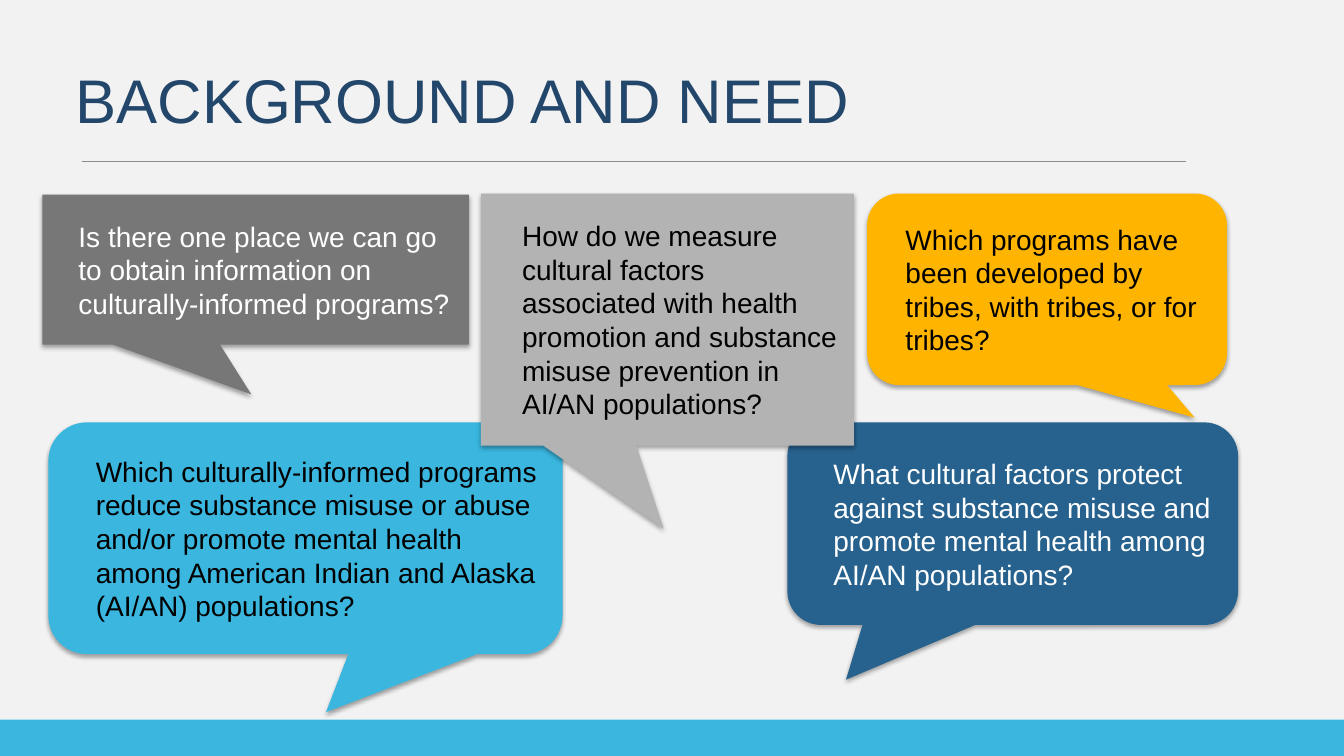
from dataclasses import dataclass

import lxml.etree
import pptx
import pptx.dml.color
import pptx.enum.shapes
import pptx.enum.text
import pptx.oxml
import pptx.oxml.ns
import pptx.util

EMU_PER_PX = 9144
SHAPES = pptx.enum.shapes.MSO_SHAPE
ROUNDED = SHAPES.ROUNDED_RECTANGULAR_CALLOUT
SQUARE = SHAPES.RECTANGULAR_CALLOUT


@dataclass(frozen=True)
class Theme:
    font: str = "Arial"
    title_size: int = 44
    body_size: int = 20
    rule_width: float = 0.5
    backdrop: str = "F2F2F2"
    sky: str = "3AB6DF"
    navy: str = "27628E"
    amber: str = "FFB500"
    dark_grey: str = "777777"
    light_grey: str = "B2B3B2"
    rule: str = "8C8C8C"
    title: str = "23466B"
    black: str = "000000"
    white: str = "FFFFFF"


@dataclass(frozen=True)
class Box:
    left: int
    top: int
    width: int
    height: int

    def emu(self) -> tuple[pptx.util.Emu, ...]:
        return tuple(px(side) for side in (self.left, self.top, self.width, self.height))


@dataclass(frozen=True)
class Callout:
    box: Box
    kind: SHAPES
    tip: tuple[float, float]
    fill: str
    color: str
    indent: int
    text: str


THEME = Theme()
BACKDROP = Box(0, 0, 1333, 714)
FOOTER = Box(0, 714, 1333, 36)
TITLE = Box(65, 36, 1145, 125)
RULE = Box(81, 160, 1095, 0)

PROTECTIVE_FACTORS = Callout(
    Box(781, 419, 447, 201), ROUNDED, (-0.37, 0.77), THEME.navy, THEME.white, 26,
    "What cultural factors protect against substance misuse and promote mental health "
    "among AI/AN populations?",
)
QUESTIONS = [
    Callout(
        Box(860, 192, 357, 190), ROUNDED, (0.41, 0.67), THEME.amber, THEME.black, 19,
        "Which programs have been developed by tribes, with tribes, or for tribes?",
    ),
    Callout(
        Box(42, 193, 423, 149), SQUARE, (-0.01, 0.83), THEME.dark_grey, THEME.white, 26,
        "Is there one place we can go to obtain information on culturally-informed programs?",
    ),
    Callout(
        Box(48, 419, 510, 230), ROUNDED, (0.04, 0.75), THEME.sky, THEME.black, 26,
        "Which culturally-informed programs reduce substance misuse or abuse and/or promote "
        "mental health among American Indian and Alaska (AI/AN) populations?",
    ),
    Callout(
        Box(477, 192, 370, 250), SQUARE, (-0.01, 0.83), THEME.light_grey, THEME.black, 31,
        "How do we measure cultural factors associated with health promotion and substance "
        "misuse prevention in AI/AN populations?",
    ),
]


def px(length: int) -> pptx.util.Emu:
    return pptx.util.Emu(length * EMU_PER_PX)


def rgb(color: str) -> pptx.dml.color.RGBColor:
    return pptx.dml.color.RGBColor.from_string(color)


def apply(target: object, values: dict[str, object]) -> None:
    for name, value in values.items():
        setattr(target, name, value)


def add_filled(slide: pptx.slide.Slide, kind: SHAPES, box: Box, fill: str) -> pptx.shapes.autoshape.Shape:
    shape = slide.shapes.add_shape(kind, *box.emu())
    shape.shadow.inherit = False
    shape.fill.solid()
    shape.fill.fore_color.rgb = rgb(fill)
    shape.line.fill.background()
    return shape


def write(shape: pptx.shapes.autoshape.Shape, text: str, size: int, color: str, indent: int = 0) -> None:
    apply(shape.text_frame, {
        "word_wrap": True,
        "vertical_anchor": pptx.enum.text.MSO_ANCHOR.MIDDLE,
    })
    paragraph = shape.text_frame.paragraphs[0]
    paragraph.alignment = pptx.enum.text.PP_ALIGN.LEFT
    paragraph._p.get_or_add_pPr().set("marL", str(px(indent)))
    run = paragraph.add_run()
    run.text = text
    apply(run.font, {"name": THEME.font, "size": pptx.util.Pt(size)})
    run.font.color.rgb = rgb(color)


def add_soft_shadow(shape: pptx.shapes.autoshape.Shape) -> None:
    effects = shape._element.spPr.find(pptx.oxml.ns.qn("a:effectLst"))
    effects.append(pptx.oxml.parse_xml(
        f'<a:outerShdw {pptx.oxml.ns.nsdecls("a")} blurRad="40000" dist="23000" '
        f'dir="5400000" rotWithShape="0"><a:srgbClr val="{THEME.black}">'
        '<a:alpha val="35000"/></a:srgbClr></a:outerShdw>'
    ))


def add_callout(slide: pptx.slide.Slide, callout: Callout) -> None:
    shape = add_filled(slide, callout.kind, callout.box, callout.fill)
    for index, offset in enumerate(callout.tip):
        shape.adjustments[index] = offset
    add_soft_shadow(shape)
    write(shape, callout.text, THEME.body_size, callout.color, callout.indent)


def add_rule(slide: pptx.slide.Slide, box: Box) -> None:
    left, top, width, height = box.emu()
    connector = slide.shapes.add_connector(
        pptx.enum.shapes.MSO_CONNECTOR.STRAIGHT, left, top, left + width, top + height
    )
    connector.line.width = pptx.util.Pt(THEME.rule_width)
    connector.line.color.rgb = rgb(THEME.rule)
    lxml.etree.SubElement(connector._element.spPr, pptx.oxml.ns.qn("a:effectLst"))


def main() -> None:
    presentation = pptx.Presentation()
    apply(presentation, {"slide_width": px(1333), "slide_height": px(750)})
    slide = presentation.slides.add_slide(presentation.slide_layouts[6])
    add_filled(slide, SHAPES.RECTANGLE, BACKDROP, THEME.backdrop)
    add_filled(slide, SHAPES.RECTANGLE, FOOTER, THEME.sky)
    add_rule(slide, RULE)
    add_callout(slide, PROTECTIVE_FACTORS)
    title = slide.shapes.add_textbox(*TITLE.emu())
    write(title, "BACKGROUND AND NEED", THEME.title_size, THEME.title)
    for question in QUESTIONS:
        add_callout(slide, question)
    presentation.save("out.pptx")


if __name__ == "__main__":
    main()
